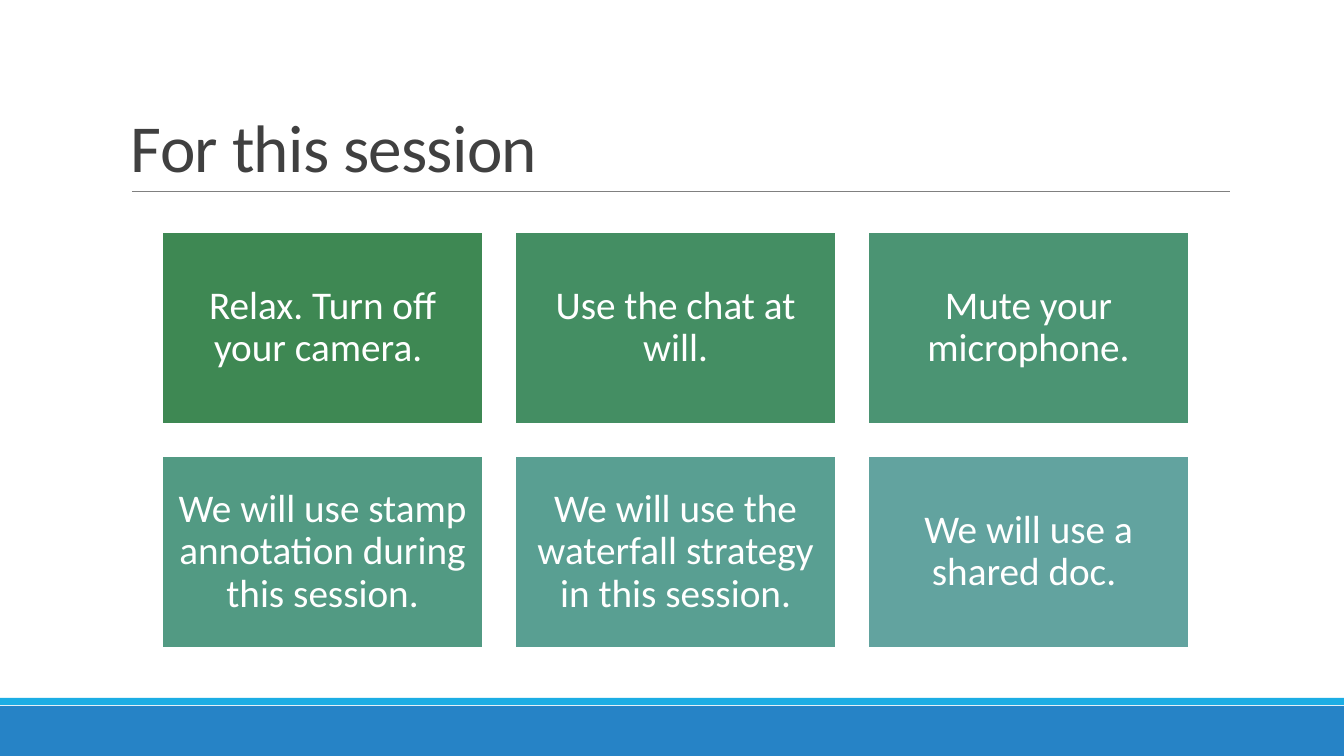
from dataclasses import dataclass

from lxml import etree
from pptx import Presentation
from pptx import util as u
from pptx.dml.color import RGBColor
from pptx.enum import shapes, text
from pptx.oxml.ns import qn

EMU_PER_PX = 914400 / 100.8
FONT = "Calibri"
WHITE = RGBColor(0xFF, 0xFF, 0xFF)
TITLE_GRAY = RGBColor(0x40, 0x40, 0x40)
RULE_GRAY = RGBColor(0x80, 0x80, 0x80)
BLUE = RGBColor(0x26, 0x83, 0xC6)
CYAN = RGBColor(0x1C, 0xAD, 0xE4)

# Card grid, in px
COLUMNS = 3
CARD_LEFT, CARD_TOP = 162, 232
CARD_W, CARD_H = 321, 192
STEP_X, STEP_Y = 353, 224


@dataclass
class Card:
    label: str
    fill: RGBColor


CARDS = [
    Card("Relax. Turn off your camera. ", RGBColor(0x3E, 0x88, 0x53)),
    Card("Use the chat at will.", RGBColor(0x44, 0x8E, 0x63)),
    Card("Mute your microphone.", RGBColor(0x4B, 0x94, 0x73)),
    Card("We will use stamp annotation during this session.", RGBColor(0x52, 0x9A, 0x83)),
    Card("We will use the waterfall strategy in this session.", RGBColor(0x59, 0x9F, 0x92)),
    Card("We will use a shared doc. ", RGBColor(0x62, 0xA3, 0x9F)),
]


def px(n: int) -> int:
    return round(n * EMU_PER_PX)


def add_rect(s, x: int, y: int, w: int, h: int, fill: RGBColor):
    sp = s.shapes.add_shape(shapes.MSO_SHAPE.RECTANGLE, px(x), px(y), px(w), px(h))
    sp.shadow.inherit = False
    sp.fill.solid()
    sp.fill.fore_color.rgb = fill
    sp.line.fill.background()
    return sp


def write(tf, label: str, size: int, color: RGBColor, spacing: float):
    tf.word_wrap = True
    tf.text = label
    p = tf.paragraphs[0]
    p.line_spacing = spacing
    r = p.runs[0]
    r.font.name = FONT
    r.font.size = u.Pt(size)
    r.font.color.rgb = color
    return r


def add_card(s, card: Card, x: int, y: int) -> None:
    sp = add_rect(s, x, y, CARD_W, CARD_H, card.fill)
    sp.line.color.rgb = WHITE
    sp.line.width = u.Pt(1.25)
    tf = sp.text_frame
    tf.margin_left = tf.margin_right = tf.margin_top = tf.margin_bottom = px(12)
    tf.vertical_anchor = text.MSO_ANCHOR.MIDDLE
    write(tf, card.label, 28, WHITE, 0.9)
    tf.paragraphs[0].alignment = text.PP_ALIGN.CENTER


def add_title(s, label: str) -> None:
    tf = s.shapes.add_textbox(px(121), px(31), px(1109), px(160)).text_frame
    tf.vertical_anchor = text.MSO_ANCHOR.BOTTOM
    r = write(tf, label, 48, TITLE_GRAY, 0.85)
    r.font._element.set("spc", "-50")


def add_rule(s, x1: int, x2: int, y: int) -> None:
    line = s.shapes.add_connector(shapes.MSO_CONNECTOR.STRAIGHT, px(x1), px(y), px(x2), px(y))
    line.line.color.rgb = RULE_GRAY
    line.line.width = u.Pt(0.5)
    etree.SubElement(line._element.spPr, qn("a:effectLst"))


def main() -> None:
    prs = Presentation()
    prs.slide_width, prs.slide_height = px(1344), px(756)
    s = prs.slides.add_slide(prs.slide_layouts[6])

    # Footer bands
    add_rect(s, 0, 706, 1344, 50, BLUE)
    add_rect(s, 0, 698, 1344, 7, CYAN)

    # Title and rule
    add_rule(s, 132, 1230, 191)
    add_title(s, "For this session")

    # Cards
    for i, card in enumerate(CARDS):
        row, col = divmod(i, COLUMNS)
        add_card(s, card, CARD_LEFT + col * STEP_X, CARD_TOP + row * STEP_Y)

    prs.save("out.pptx")


if __name__ == "__main__":
    main()
